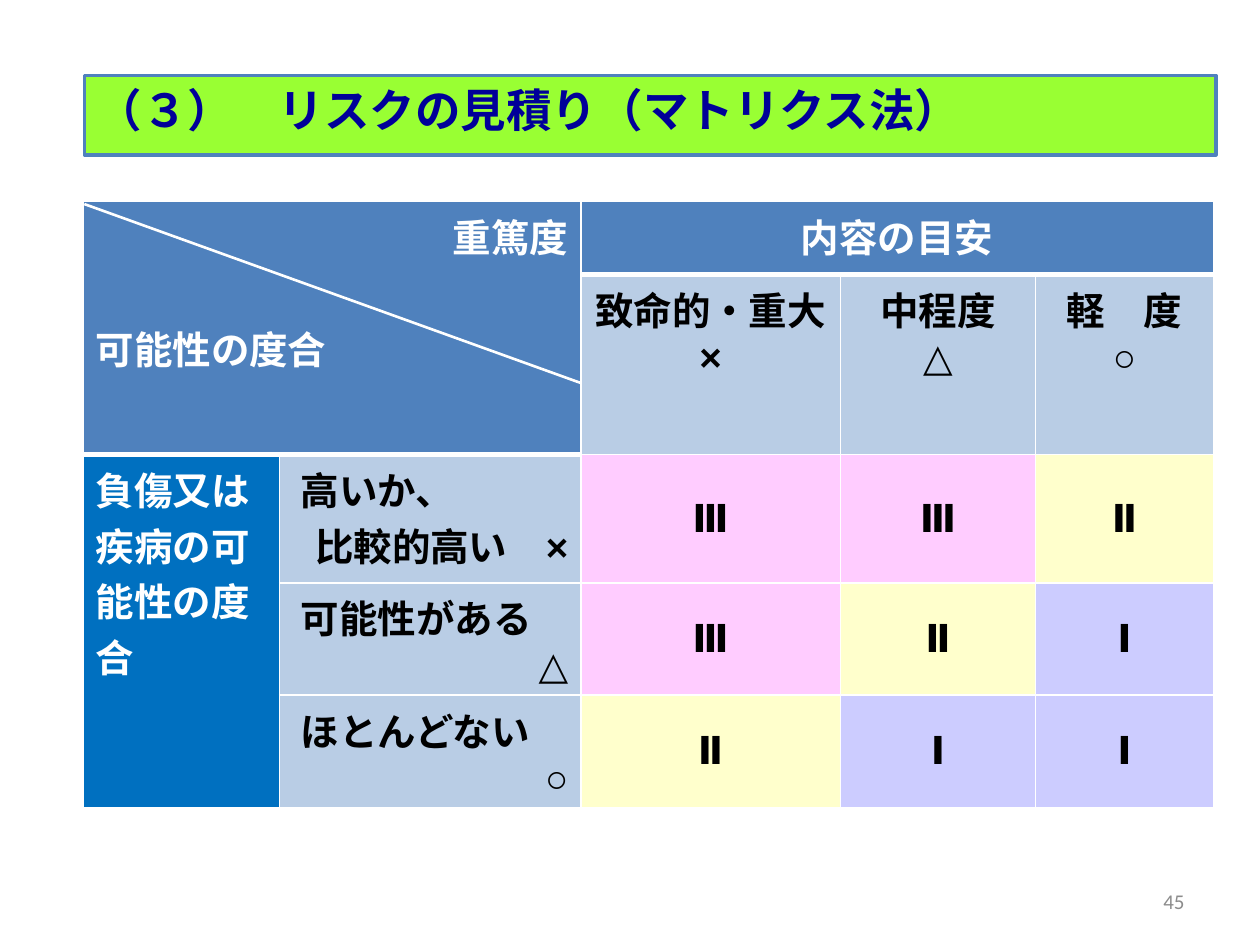
from dataclasses import dataclass
from lxml import etree
from pptx import Presentation
from pptx import util as u
from pptx.dml.color import RGBColor
from pptx.enum import shapes, text
from pptx.oxml.ns import qn

COLORS = {
    "white": "FFFFFF", "black": "000000", "lime": "99FF33", "navy": "000099",
    "blue": "4F81BD", "pale": "B9CDE5", "deep": "0070C0", "gray": "8C8C8C",
    "pink": "FFCCFF", "cream": "FFFFCC", "lilac": "CCCCFF",
}
LEFT, CENTER, RIGHT = text.PP_ALIGN.LEFT, text.PP_ALIGN.CENTER, text.PP_ALIGN.RIGHT
RATING_FILLS = {"Ⅲ": "pink", "Ⅱ": "cream", "Ⅰ": "lilac"}
COLUMN_WIDTHS = (1.56, 2.39, 2.06, 1.55, 1.41)
ROW_HEIGHTS = (0.58, 0.89, 1.02, 0.89, 0.89)
SEVERITIES = (("致命的・重大", "×"), ("中程度", "△"), ("軽　度", "○"))
LIKELIHOODS = (
    (" 高いか、", "比較的高い　×", "ⅢⅢⅡ"),
    (" 可能性がある", "△", "ⅢⅡⅠ"),
    (" ほとんどない", "○", "ⅡⅠⅠ"),
)


@dataclass
class Line:
    words: str
    align: text.PP_ALIGN = LEFT
    hanging: float = 0
    before: float = 0


@dataclass
class Entry:
    row: int
    column: int
    lines: list[Line]
    fill: str
    color: str = "black"
    rows: int = 1
    columns: int = 1
    middle: bool = False


def rgb(name: str) -> RGBColor:
    return RGBColor.from_string(COLORS[name])


def write(frame, lines: list[Line], size: float, font: str, color: str, bold: bool) -> None:
    for index, line in enumerate(lines):
        paragraph = frame.add_paragraph() if index else frame.paragraphs[0]
        paragraph.alignment = line.align
        paragraph.space_before = u.Pt(line.before)
        if line.hanging:
            properties = paragraph._p.get_or_add_pPr()
            properties.set("marL", str(u.Inches(line.hanging)))
            properties.set("indent", str(-u.Inches(line.hanging)))
        run = paragraph.add_run()
        run.text = line.words
        run.font.size = u.Pt(size)
        run.font.name = font
        run.font.bold = bold
        run.font.color.rgb = rgb(color)


def add_borders(cell, bottom: float) -> None:
    properties = cell._tc.get_or_add_tcPr()
    for side, width in (("L", 1), ("R", 1), ("T", 1), ("B", bottom)):
        border = etree.SubElement(properties, qn(f"a:ln{side}"), w=str(u.Pt(width)))
        fill = etree.SubElement(border, qn("a:solidFill"))
        etree.SubElement(fill, qn("a:srgbClr"), val=COLORS["white"])


def fill_entry(table, entry: Entry) -> None:
    cell = table.cell(entry.row, entry.column)
    if entry.rows * entry.columns > 1:
        cell.merge(table.cell(entry.row + entry.rows - 1, entry.column + entry.columns - 1))
    cell.fill.solid()
    cell.fill.fore_color.rgb = rgb(entry.fill)
    cell.vertical_anchor = text.MSO_ANCHOR.MIDDLE if entry.middle else text.MSO_ANCHOR.TOP
    write(cell.text_frame, entry.lines, 22, "Arial", entry.color, True)


def matrix_entries() -> list[Entry]:
    entries = [
        Entry(0, 0, [Line("重篤度", RIGHT), Line("可能性の度合", before=32)],
              "blue", "white", rows=2, columns=2),
        Entry(0, 2, [Line("内容の目安", CENTER)], "blue", "white", columns=3),
        Entry(2, 0, [Line("負傷又は疾病の可能性の度合")], "deep", "white", rows=3),
    ]
    for column, severity in enumerate(SEVERITIES, 2):
        entries.append(Entry(1, column, [Line(words, CENTER, 0.39) for words in severity], "pale"))
    for row, (label, mark, ratings) in enumerate(LIKELIHOODS, 2):
        entries.append(Entry(row, 1, [Line(label), Line(mark, RIGHT)], "pale"))
        for column, rating in enumerate(ratings, 2):
            entries.append(Entry(row, column, [Line(rating, CENTER, 0.39)],
                                 RATING_FILLS[rating], middle=True))
    return entries


def add_title(slide) -> None:
    title = slide.shapes.add_shape(shapes.MSO_SHAPE.RECTANGLE, u.Inches(0.67), u.Inches(0.6),
                                   u.Inches(8.98), u.Inches(0.63))
    title.shadow.inherit = False
    title.fill.solid()
    title.fill.fore_color.rgb = rgb("lime")
    title.line.color.rgb = rgb("blue")
    title.line.width = u.Pt(2)
    title.text_frame.word_wrap = True
    title.text_frame.vertical_anchor = text.MSO_ANCHOR.TOP
    write(title.text_frame, [Line("（３）　リスクの見積り（マトリクス法）", LEFT, 0.38, 5.2)],
          26, "Calibri", "navy", True)


def add_matrix(slide) -> None:
    matrix = slide.shapes.add_table(
        len(ROW_HEIGHTS), len(COLUMN_WIDTHS), u.Inches(0.66), u.Inches(1.6),
        u.Inches(sum(COLUMN_WIDTHS)), u.Inches(sum(ROW_HEIGHTS))).table
    matrix.first_row = matrix.horz_banding = False
    for column, width in zip(matrix.columns, COLUMN_WIDTHS):
        column.width = u.Inches(width)
    for index, (row, height) in enumerate(zip(matrix.rows, ROW_HEIGHTS)):
        row.height = u.Inches(height)
        for position, cell in enumerate(row.cells):
            add_borders(cell, 3 if index == 0 or (index == 1 and position < 2) else 1)
    for entry in matrix_entries():
        fill_entry(matrix, entry)


def add_diagonal(slide) -> None:
    diagonal = slide.shapes.add_connector(
        shapes.MSO_CONNECTOR.STRAIGHT, u.Inches(0.67), u.Inches(1.62),
        u.Inches(4.61), u.Inches(3.04))
    diagonal.line.color.rgb = rgb("white")
    diagonal.line.width = u.Pt(1.5)
    etree.SubElement(diagonal._element.spPr, qn("a:effectLst"))


def add_page_number(slide) -> None:
    number = slide.shapes.add_textbox(u.Inches(7.17), u.Inches(6.95),
                                      u.Inches(2.33), u.Inches(0.4)).text_frame
    number.word_wrap = True
    number.vertical_anchor = text.MSO_ANCHOR.MIDDLE
    write(number, [Line("45", RIGHT)], 12, "Calibri", "gray", False)


def main() -> None:
    deck = Presentation()
    deck.slide_width, deck.slide_height = u.Inches(10), u.Inches(7.5)
    slide = deck.slides.add_slide(deck.slide_layouts[6])
    add_title(slide)
    add_matrix(slide)
    add_diagonal(slide)
    add_page_number(slide)
    deck.save("out.pptx")


if __name__ == "__main__":
    main()
